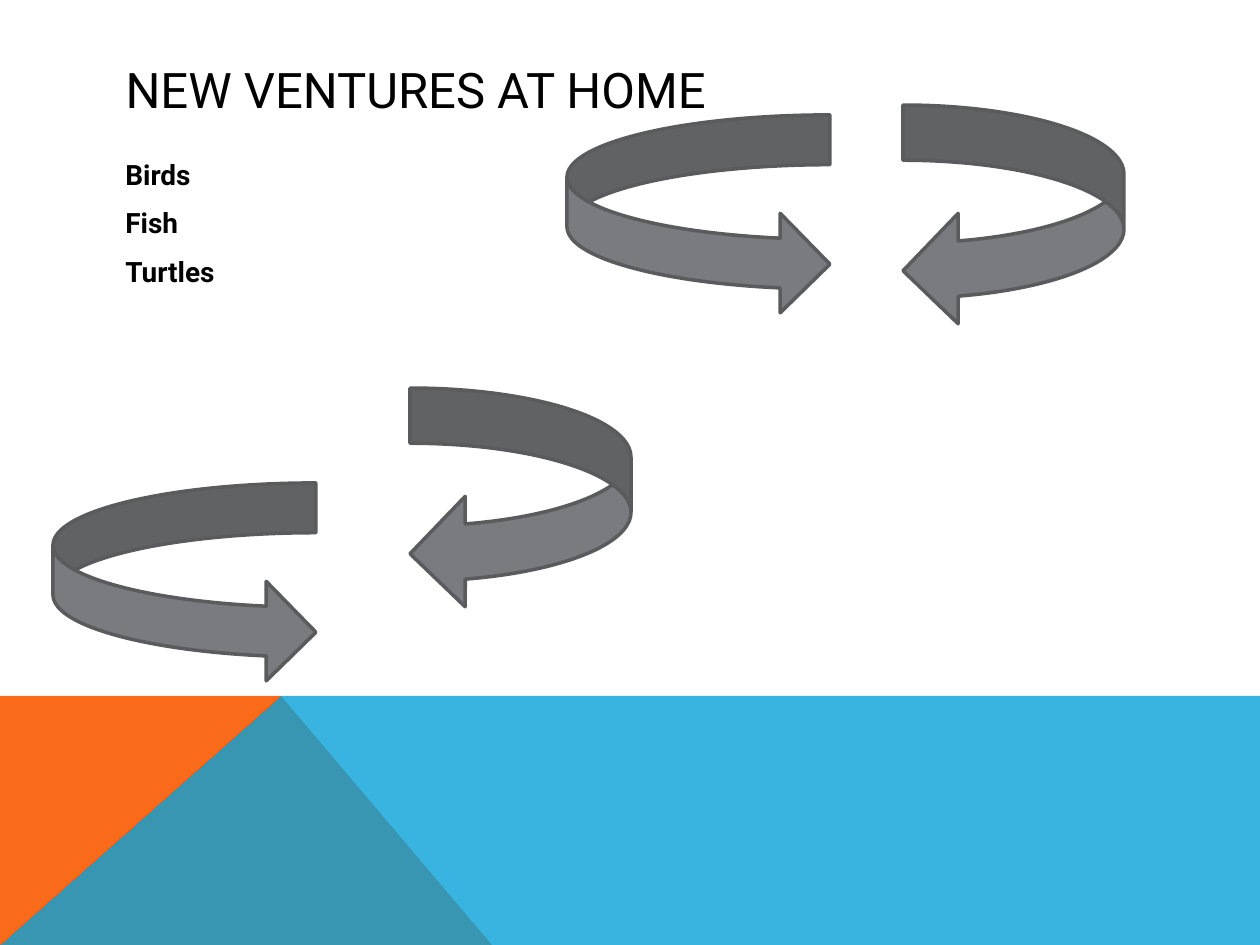
from lxml.etree import SubElement
from pptx import Presentation
from pptx.dml.color import RGBColor
from pptx.enum.shapes import MSO_SHAPE
from pptx.enum.text import MSO_ANCHOR, MSO_AUTO_SIZE, PP_ALIGN
from pptx.oxml.ns import qn
from pptx.util import Pt

PX = 914400 / 126
WIDTH, HEIGHT = 1260, 945
FONT = "Roboto"


def px(n):
    return round(n * PX)


def rgb(color):
    return RGBColor.from_string(color)


def set_fill(sp, color, alpha=None):
    """Fill a shape; alpha is the opacity in percent."""
    sp.shadow.inherit = False
    sp.fill.solid()
    sp.fill.fore_color.rgb = rgb(color)
    if alpha is not None:
        clr = sp._element.spPr.find(qn("a:solidFill"))[0]
        SubElement(clr, qn("a:alpha")).set("val", str(alpha * 1000))


def set_text(tf, lines, size=16, bold=False, color="000000",
             anchor=MSO_ANCHOR.TOP, space=0, hanging=0):
    tf.word_wrap = True
    tf.auto_size = MSO_AUTO_SIZE.NONE
    tf.vertical_anchor = anchor
    for i, line in enumerate(lines):
        p = tf.paragraphs[0] if i == 0 else tf.add_paragraph()
        p.alignment = PP_ALIGN.LEFT
        p.space_before = Pt(space)
        if hanging:
            pPr = p._p.get_or_add_pPr()
            pPr.set("marL", str(px(hanging)))
            pPr.set("indent", str(-px(hanging)))
        r = p.add_run()
        r.text = line
        r.font.name = FONT
        r.font.size = Pt(size)
        r.font.bold = bold
        r.font.color.rgb = rgb(color)


def add_polygon(s, points, color, alpha=None):
    builder = s.shapes.build_freeform(*points[0], scale=PX)
    builder.add_line_segments(points[1:], close=True)
    sp = builder.convert_to_shape()
    set_fill(sp, color, alpha)
    sp.line.fill.background()


def add_footer_band(s, x, y, w, h):
    """Orange wedge under a translucent blue band that share a peak."""
    peak, foot = (x + 281, y), (x + 492, y + h)
    corner = (x, y + h)
    add_polygon(s, [corner, (x, y), peak, foot], "F96A1B")
    add_polygon(s, [corner, peak, (x + w, y), (x + w, y + h)], "08A1D9", alpha=80)


def add_arrow_pair(s, right_at, left_at):
    """A right and a left curved arrow, each placed by its top left corner."""
    for kind, at, size in (
        (MSO_SHAPE.CURVED_RIGHT_ARROW, right_at, (263, 199)),
        (MSO_SHAPE.CURVED_LEFT_ARROW, left_at, (221, 221)),
    ):
        sp = s.shapes.add_shape(kind, *map(px, at + size))
        set_fill(sp, "797B7E")
        sp.line.color.rgb = rgb("5A5B5D")
        sp.line.width = Pt(2)


def add_title(s, x, y, w, h, text):
    sp = s.shapes.title
    sp.left, sp.top, sp.width, sp.height = map(px, (x, y, w, h))
    set_text(sp.text_frame, [text], size=28, anchor=MSO_ANCHOR.MIDDLE)


def add_list(s, x, y, w, h, items):
    sp = s.shapes.add_textbox(*map(px, (x, y, w, h)))
    set_text(sp.text_frame, items, bold=True, space=8.6, hanging=48)


def main():
    prs = Presentation()
    prs.slide_width, prs.slide_height = px(WIDTH), px(HEIGHT)
    s = prs.slides.add_slide(prs.slide_layouts[5])
    add_footer_band(s, 0, 696, WIDTH, HEIGHT - 696)
    add_arrow_pair(s, right_at=(567, 115), left_at=(903, 105))
    add_arrow_pair(s, right_at=(53, 483), left_at=(410, 388))
    add_title(s, 113, 51, 1036, 76, "NEW VENTURES AT HOME")
    add_list(s, 113, 151, 1036, 493, ["Birds", "Fish", "Turtles"])
    prs.save("out.pptx")


if __name__ == "__main__":
    main()
